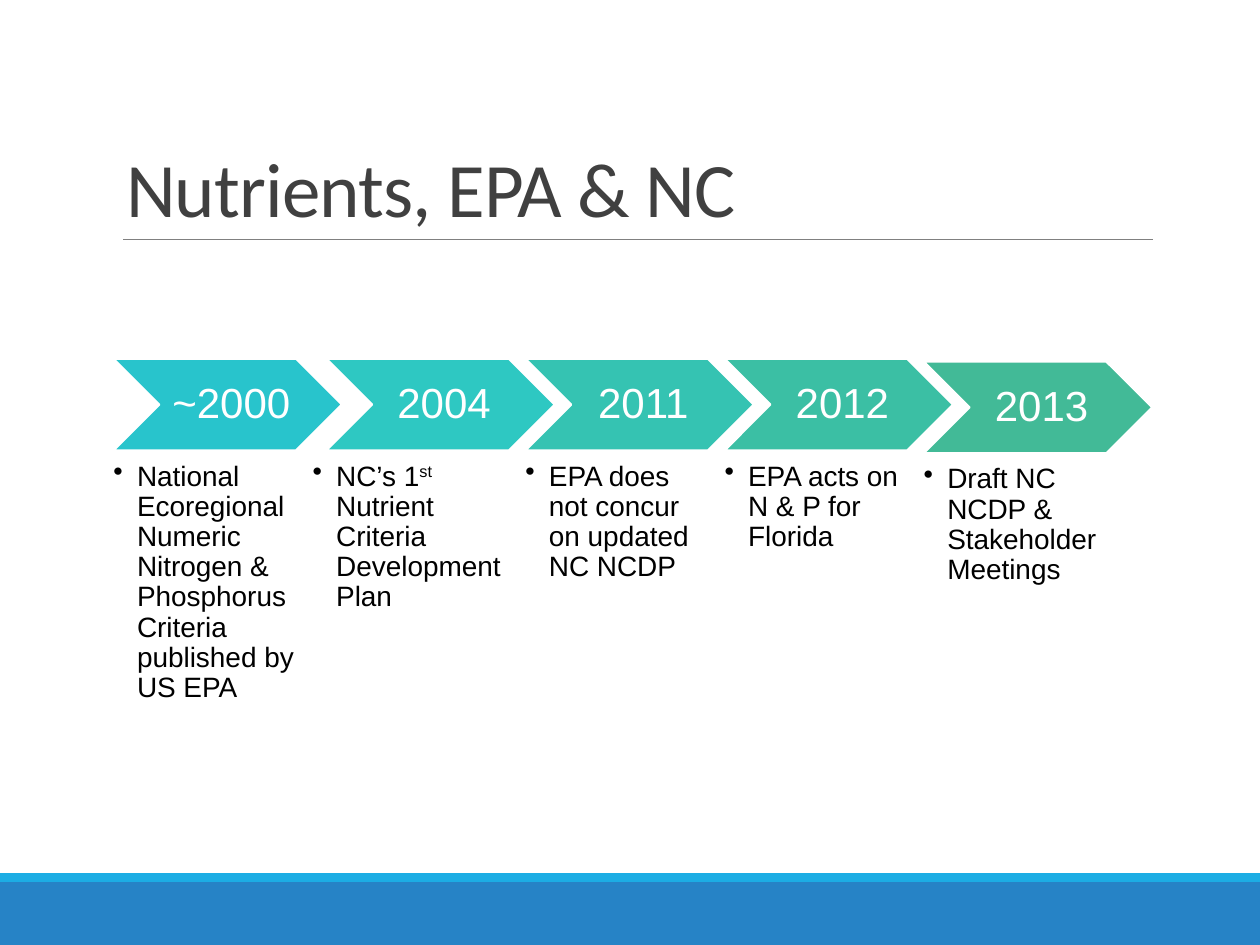
from lxml import etree
from pptx import Presentation
from pptx.dml.color import RGBColor
from pptx.enum.shapes import MSO_CONNECTOR, MSO_SHAPE
from pptx.enum.text import MSO_ANCHOR, PP_ALIGN
from pptx.oxml.ns import qn
from pptx.util import Pt

RECT, CHEVRON = MSO_SHAPE.RECTANGLE, MSO_SHAPE.CHEVRON
STRAIGHT = MSO_CONNECTOR.STRAIGHT
TOP, MIDDLE, BOTTOM = MSO_ANCHOR.TOP, MSO_ANCHOR.MIDDLE, MSO_ANCHOR.BOTTOM
LEFT, CENTER = PP_ALIGN.LEFT, PP_ALIGN.CENTER


def rgb(code):
    return RGBColor.from_string(code)


def write(shape, text, size, color, font="Arial", align=LEFT, anchor=TOP,
          inset=(0, 0, 0, 0), wrap=True, space=0.9, track=0, bullet=False):
    """Fill the shape with one paragraph; text between ^ marks is superscript."""
    frame = shape.text_frame
    frame.word_wrap, frame.vertical_anchor = wrap, anchor
    (frame.margin_left, frame.margin_top,
     frame.margin_right, frame.margin_bottom) = [Pt(n) for n in inset]
    para = frame.paragraphs[0]
    para.alignment, para.line_spacing = align, space
    for i, part in enumerate(text.split("^")):
        run = para.add_run()
        run.text = part
        run.font.name, run.font.size = font, Pt(size)
        run.font.color.rgb = rgb(color)
        props = run._r.get_or_add_rPr()
        if i % 2:
            props.set("baseline", "30000")
        if track:
            props.set("spc", str(int(track * 100)))
    if bullet:
        props = para._p.get_or_add_pPr()
        props.set("marL", str(Pt(13.5)))
        props.set("indent", str(-Pt(13.5)))
        etree.SubElement(props, qn("a:buChar")).set("char", "•")


deck = Presentation()
deck.slide_width, deck.slide_height = Pt(720), Pt(540)
slide = deck.slides.add_slide(deck.slide_layouts[5])
shapes = slide.shapes

# Footer bands
for top, high, color in [(504, 36, "2683C6"), (499, 5, "1CADE4")]:
    band = shapes.add_shape(RECT, 0, Pt(top), Pt(720), Pt(high))
    band.shadow.inherit = False
    band.fill.solid()
    band.fill.fore_color.rgb = rgb(color)
    band.line.fill.background()

# Title and the rule below it
title = shapes.title
title.left, title.top, title.width, title.height = Pt(64.8), Pt(22.5), Pt(594), Pt(114.3)
write(title, "Nutrients, EPA & NC", 44, "404040", font="Calibri", anchor=BOTTOM,
      inset=(7.2, 3.6, 7.2, 3.6), space=0.85, track=-0.5)
rule = shapes.add_connector(STRAIGHT, Pt(70.5), Pt(136.8), Pt(659), Pt(136.8))
rule.line.color.rgb = rgb("808080")
rule.line.width = Pt(0.5)
etree.SubElement(rule._element.spPr, qn("a:effectLst"))

# Timeline: year, colour, arrow left, top, note left, note width, note
steps = [
    ("~2000", "28C4CC", 64.8, 205, 64.8, 104.4,
     "National Ecoregional Numeric Nitrogen & Phosphorus Criteria published by US EPA"),
    ("2004", "2EC8C2", 186.4, 205, 178.6, 120,
     "NC’s 1^st^ Nutrient Criteria Development Plan"),
    ("2011", "35C3B2", 300.2, 205, 300.2, 104.4,
     "EPA does not concur on updated NC NCDP"),
    ("2012", "3BBFA4", 414, 205, 414, 104.4, "EPA acts on N & P for Florida"),
    ("2013", "42BA97", 527.8, 206.6, 527.8, 104.4,
     "Draft NC NCDP & Stakeholder Meetings"),
]
for year, color, left, top, edge, wide, note in steps:
    arrow = shapes.add_shape(CHEVRON, Pt(left), Pt(top), Pt(130.6), Pt(52.4))
    arrow.shadow.inherit = False
    arrow.fill.solid()
    arrow.fill.fore_color.rgb = rgb(color)
    arrow.line.color.rgb = rgb("FFFFFF")
    arrow.line.width = Pt(1.25)
    write(arrow, year, 24, "FFFFFF", align=CENTER, anchor=MIDDLE,
          inset=(7.2, 2.9, 2.9, 2.9), wrap=False)
    box = shapes.add_textbox(Pt(edge), Pt(top + 59), Pt(wide), Pt(140))
    write(box, note, 16, "000000", bullet=True)

deck.save("out.pptx")
